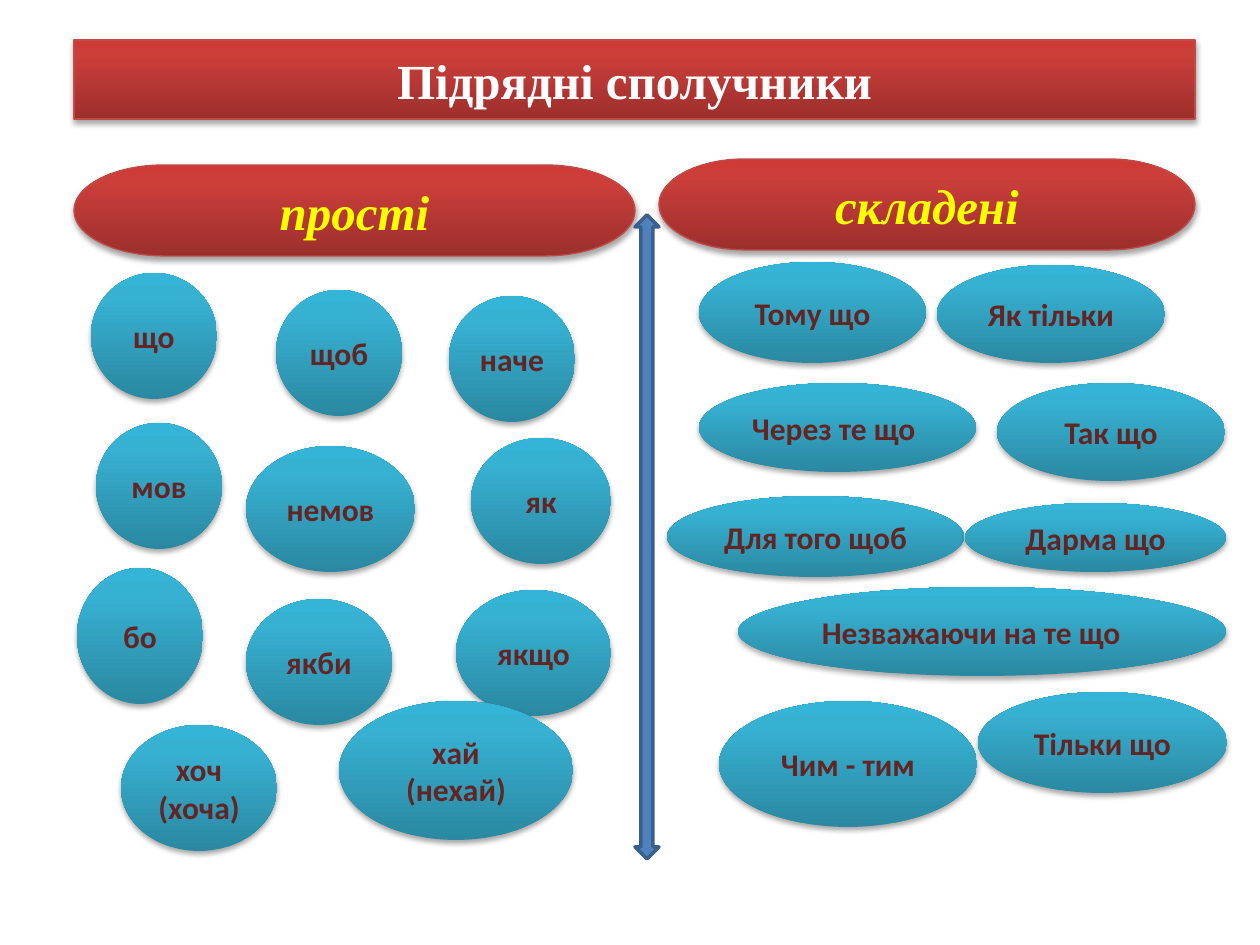
import copy
import dataclasses

import pptx
import pptx.dml.color
import pptx.enum.shapes
import pptx.enum.text
import pptx.oxml
import pptx.oxml.ns
import pptx.util

RGB = pptx.dml.color.RGBColor
SHAPE = pptx.enum.shapes.MSO_SHAPE
ALIGN = pptx.enum.text.PP_ALIGN
qn = pptx.oxml.ns.qn

SCALE = 914400 / 126
WHITE = RGB(0xFF, 0xFF, 0xFF)
YELLOW = RGB(0xFF, 0xFF, 0x00)
MAROON = RGB(0x63, 0x25, 0x23)
RED_EDGE = RGB(0xBF, 0x4C, 0x48)
ARROW_FILL = RGB(0x4F, 0x81, 0xBD)
ARROW_EDGE = RGB(0x3A, 0x5F, 0x8C)
RED_STOPS = (RGB(0x9C, 0x2F, 0x2D), RGB(0xCB, 0x3E, 0x3A), RGB(0xCE, 0x3B, 0x37))
TEAL_STOPS = (RGB(0x2A, 0x88, 0xA2), RGB(0x37, 0xB1, 0xD2), RGB(0x34, 0xB4, 0xD6))
STOP_POSITIONS = (0, 0.8, 1)

TITLE_FONT = {"name": "Times New Roman", "size": pptx.util.Pt(28), "bold": True, "italic": False}
HEADING_FONT = {**TITLE_FONT, "italic": True}
WORD_FONT = {"name": "Calibri", "size": pptx.util.Pt(18), "bold": True}

SHADOW_XML = (
    f'<a:outerShdw {pptx.oxml.ns.nsdecls("a")} blurRad="40000" dist="23000" '
    'dir="5400000" rotWithShape="0"><a:srgbClr val="000000">'
    '<a:alpha val="35000"/></a:srgbClr></a:outerShdw>'
)


@dataclasses.dataclass(frozen=True)
class Box:
    left: int
    top: int
    width: int
    height: int

    def emu(self) -> list[int]:
        return [round(v * SCALE) for v in dataclasses.astuple(self)]


@dataclasses.dataclass(frozen=True)
class Word:
    text: str
    box: Box
    align: ALIGN = ALIGN.CENTER


TITLE_BOX = Box(74, 40, 1121, 79)
ARROW_BOX = Box(635, 215, 24, 644)
HEADINGS = (
    Word("прості", Box(74, 165, 561, 91)),
    Word("складені", Box(659, 159, 536, 91)),
)
WORDS = (
    Word("Тому що", Box(699, 262, 227, 101)),
    Word("Як тільки", Box(937, 265, 228, 98)),
    Word("Через те що", Box(699, 383, 277, 89), ALIGN.LEFT),
    Word("Так що", Box(997, 383, 228, 98)),
    Word("Для того щоб", Box(667, 496, 297, 81)),
    Word("Дарма що", Box(965, 503, 261, 69)),
    Word("Незважаючи на те що", Box(738, 587, 488, 89), ALIGN.LEFT),
    Word("Тільки що", Box(978, 692, 249, 101)),
    Word("Чим - тим", Box(719, 701, 258, 126)),
    Word("що", Box(91, 273, 126, 126)),
    Word("щоб", Box(276, 290, 126, 126)),
    Word("наче", Box(449, 296, 126, 126)),
    Word("мов", Box(96, 423, 126, 126)),
    Word("немов", Box(246, 446, 169, 126)),
    Word("бо", Box(77, 568, 126, 136)),
    Word("як", Box(471, 438, 140, 126)),
    Word("якби", Box(246, 599, 146, 126)),
    Word("якщо", Box(456, 590, 155, 126)),
    Word("хоч (хоча)", Box(121, 725, 156, 126)),
    Word("хай\n(нехай)", Box(339, 701, 234, 139)),
)


def paint(s, colors: tuple, edge: RGB | None) -> None:
    s.fill.gradient()
    s.fill.gradient_angle = 90
    stops = s._element.spPr.find(f".//{qn('a:gsLst')}")
    stops.append(copy.deepcopy(stops[-1]))
    for stop, color, position in zip(s.fill.gradient_stops, colors, STOP_POSITIONS):
        stop.color.rgb = color
        stop.position = position
    if edge is None:
        s.line.fill.background()
    else:
        s.line.color.rgb = edge
        s.line.width = pptx.util.Pt(0.75)
    s.shadow.inherit = False
    s._element.spPr.find(qn("a:effectLst")).append(pptx.oxml.parse_xml(SHADOW_XML))


def write(s, text: str, font: dict, color: RGB, align: ALIGN) -> None:
    tf = s.text_frame
    tf.text = text
    tf.word_wrap = True
    tf.auto_size = pptx.enum.text.MSO_AUTO_SIZE.NONE
    tf.vertical_anchor = pptx.enum.text.MSO_ANCHOR.MIDDLE
    for p in tf.paragraphs:
        p.alignment = align
        for r in p.runs:
            for name, value in font.items():
                setattr(r.font, name, value)
            r.font.color.rgb = color


def draw_title(slide) -> None:
    s = slide.shapes.title
    s.left, s.top, s.width, s.height = TITLE_BOX.emu()
    s._element.spPr.append(pptx.oxml.parse_xml(
        f'<a:prstGeom {pptx.oxml.ns.nsdecls("a")} prst="roundRect"><a:avLst/></a:prstGeom>'
    ))
    paint(s, RED_STOPS, RED_EDGE)
    write(s, "Підрядні сполучники", TITLE_FONT, WHITE, ALIGN.CENTER)


def draw_word(slide, word: Word, kind: SHAPE, colors: tuple, edge: RGB | None,
              font: dict, color: RGB) -> None:
    s = slide.shapes.add_shape(kind, *word.box.emu())
    paint(s, colors, edge)
    write(s, word.text, font, color, word.align)


def draw_arrow(slide) -> None:
    s = slide.shapes.add_shape(SHAPE.UP_DOWN_ARROW, *ARROW_BOX.emu())
    s.fill.solid()
    s.fill.fore_color.rgb = ARROW_FILL
    s.line.color.rgb = ARROW_EDGE
    s.line.width = pptx.util.Pt(2)
    s.shadow.inherit = False


def main() -> None:
    prs = pptx.Presentation()
    prs.slide_width = round(1260 * SCALE)
    prs.slide_height = round(945 * SCALE)
    slide = prs.slides.add_slide(prs.slide_layouts[5])
    draw_title(slide)
    for heading in HEADINGS:
        draw_word(slide, heading, SHAPE.FLOWCHART_TERMINATOR, RED_STOPS, RED_EDGE,
                  HEADING_FONT, YELLOW)
    for word in WORDS:
        draw_word(slide, word, SHAPE.OVAL, TEAL_STOPS, None, WORD_FONT, MAROON)
    draw_arrow(slide)
    prs.save("out.pptx")


if __name__ == "__main__":
    main()
